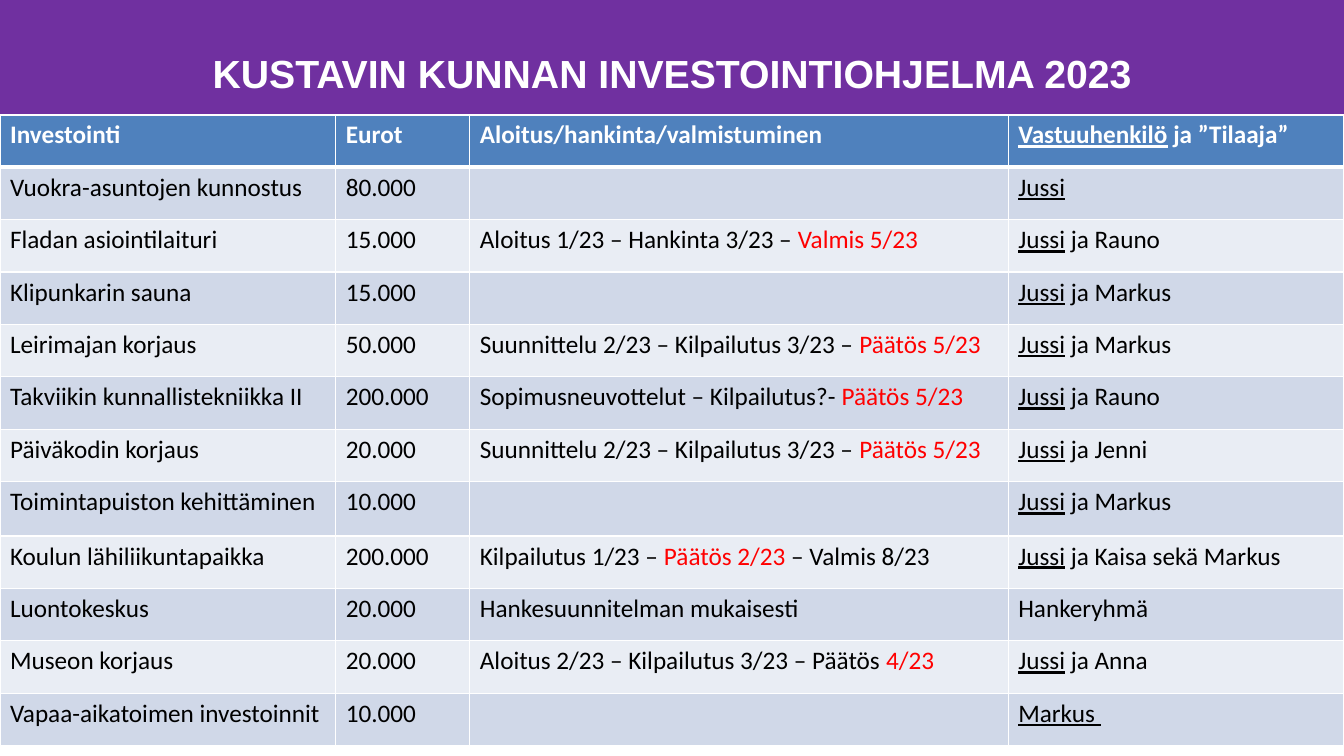
from dataclasses import dataclass

from lxml.etree import SubElement
from pptx import Presentation
from pptx.dml.color import RGBColor
from pptx.enum.shapes import MSO_SHAPE as Shape
from pptx.enum.text import MSO_ANCHOR as Anchor, PP_ALIGN as Align
from pptx.oxml.ns import qn
from pptx.util import Inches, Pt

COLORS = {
    "banner": "7030A0",
    "header": "4F81BD",
    "odd": "D0D8E8",
    "even": "E9EDF4",
    "white": "FFFFFF",
    "black": "000000",
    "red": "FF0000",
}
COLUMN_WIDTHS = (3.33, 1.33, 5.34, 3.33)
ROW_HEIGHT, TALL_ROW_HEIGHT, TALL_ROW = 0.52, 0.54, 7


@dataclass(frozen=True)
class Part:
    text: str
    color: str = "black"
    underline: bool = False


@dataclass(frozen=True)
class Investment:
    name: str
    euros: str
    schedule: tuple[Part, ...]
    lead: str
    others: str = ""

    def cells(self) -> list[tuple[Part, ...]]:
        people = (Part(self.lead, underline=True), Part(self.others))
        return [(Part(self.name),), (Part(self.euros),), self.schedule, people]


def red(text: str) -> Part:
    return Part(text, "red")


DECISION_PLAN = (Part("Suunnittelu 2/23 – Kilpailutus 3/23 – "), red("Päätös 5/23"))
HEADER = [
    (Part("Investointi", "white"),),
    (Part("Eurot", "white"),),
    (Part("Aloitus/hankinta/valmistuminen", "white"),),
    (Part("Vastuuhenkilö", "white", True), Part(" ja ”Tilaaja”", "white")),
]
INVESTMENTS = [
    Investment("Vuokra-asuntojen kunnostus", "80.000", (), "Jussi"),
    Investment("Fladan asiointilaituri", "15.000",
               (Part("Aloitus 1/23 – Hankinta 3/23 – "), red("Valmis 5/23")),
               "Jussi", " ja Rauno"),
    Investment("Klipunkarin sauna", "15.000", (), "Jussi", " ja Markus"),
    Investment("Leirimajan korjaus", "50.000", DECISION_PLAN, "Jussi", " ja Markus"),
    Investment("Takviikin kunnallistekniikka II", "200.000",
               (Part("Sopimusneuvottelut – Kilpailutus?- "), red("Päätös 5/23")),
               "Jussi", " ja Rauno"),
    Investment("Päiväkodin korjaus", "20.000", DECISION_PLAN, "Jussi", " ja Jenni"),
    Investment("Toimintapuiston kehittäminen", "10.000", (), "Jussi", " ja Markus"),
    Investment("Koulun lähiliikuntapaikka", "200.000",
               (Part("Kilpailutus 1/23 – "), red("Päätös 2/23 "), Part("– Valmis 8/23")),
               "Jussi", " ja Kaisa sekä Markus"),
    Investment("Luontokeskus", "20.000", (Part("Hankesuunnitelman mukaisesti"),),
               "", "Hankeryhmä"),
    Investment("Museon korjaus", "20.000",
               (Part("Aloitus 2/23 – Kilpailutus 3/23 – Päätös "), red("4/23")),
               "Jussi", " ja Anna"),
    Investment("Vapaa-aikatoimen investoinnit", "10.000", (), "Markus "),
]


def rgb(name: str) -> RGBColor:
    return RGBColor.from_string(COLORS[name])


def format_font(font, color: str, **values) -> None:
    for name, value in values.items():
        setattr(font, name, value)
    font.color.rgb = rgb(color)


def add_borders(cell, top: float, bottom: float) -> None:
    properties = cell._tc.get_or_add_tcPr()
    for side, width in {"L": 1, "R": 1, "T": top, "B": bottom}.items():
        line = SubElement(properties, qn(f"a:ln{side}"), w=str(Pt(width)))
        fill = SubElement(line, qn("a:solidFill"))
        SubElement(fill, qn("a:srgbClr"), val=COLORS["white"])


def fill_cell(cell, parts: tuple[Part, ...], row: int) -> None:
    add_borders(cell, top=3 if row == 1 else 1, bottom=3 if row == 0 else 1)
    cell.fill.solid()
    cell.fill.fore_color.rgb = rgb("header" if row == 0 else "odd" if row % 2 else "even")
    paragraph = cell.text_frame.paragraphs[0]
    for part in parts:
        if part.text:
            run = paragraph.add_run()
            run.text = part.text
            format_font(run.font, part.color, name="Calibri", size=Pt(18),
                        bold=row == 0, underline=part.underline)


def add_heading(slide) -> None:
    banner = slide.shapes.add_shape(
        Shape.RECTANGLE, Inches(0), Inches(-0.01), Inches(13.33), Inches(1.15))
    banner.shadow.inherit = False
    banner.fill.solid()
    banner.fill.fore_color.rgb = rgb("banner")
    banner.line.fill.background()

    # Title in front of the banner
    title = slide.shapes.title
    title.element.getparent().append(title.element)
    box = {"left": 0, "top": 0.3, "width": 13.33, "height": 0.84}
    for name, value in box.items():
        setattr(title, name, Inches(value))
    frame = title.text_frame
    frame.text = "KUSTAVIN KUNNAN INVESTOINTIOHJELMA 2023"
    frame.vertical_anchor = Anchor.MIDDLE
    paragraph = frame.paragraphs[0]
    paragraph.alignment = Align.CENTER
    format_font(paragraph.runs[0].font, "white", name="Arial", size=Pt(28), bold=True)


def add_investment_table(slide) -> None:
    rows = [HEADER] + [investment.cells() for investment in INVESTMENTS]
    table = slide.shapes.add_table(
        len(rows), len(COLUMN_WIDTHS), Inches(0), Inches(1.14),
        Inches(13.33), Inches(6.26)).table
    for column, width in zip(table.columns, COLUMN_WIDTHS):
        column.width = Inches(width)
    for index, row in enumerate(rows):
        height = TALL_ROW_HEIGHT if index == TALL_ROW else ROW_HEIGHT
        table.rows[index].height = Inches(height)
        for column, parts in enumerate(row):
            fill_cell(table.cell(index, column), parts, index)


def main() -> None:
    presentation = Presentation()
    presentation.slide_width = Inches(13.33)
    presentation.slide_height = Inches(7.5)
    slide = presentation.slides.add_slide(presentation.slide_layouts[5])
    add_heading(slide)
    add_investment_table(slide)
    presentation.save("out.pptx")


if __name__ == "__main__":
    main()
